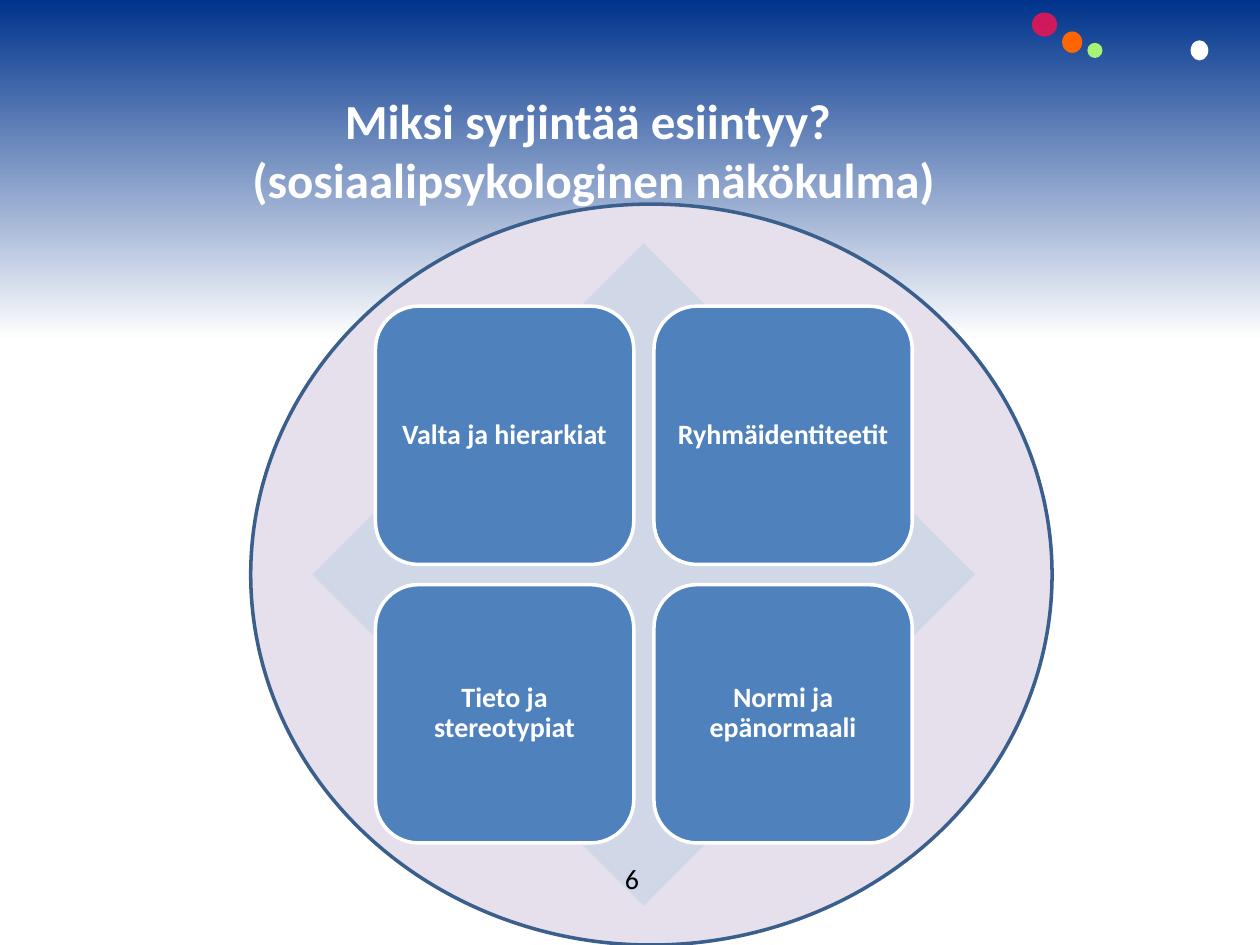
from lxml.etree import SubElement
from pptx import Presentation
from pptx.dml.color import RGBColor
from pptx.enum.shapes import MSO_SHAPE
from pptx.enum.text import MSO_ANCHOR, MSO_AUTO_SIZE, PP_ALIGN
from pptx.oxml.ns import qn
from pptx.util import Inches, Pt

TITLE = ["Miksi syrjintää esiintyy? ", "(sosiaalipsykologinen näkökulma)"]
CAUSES = [
    ["Valta ja hierarkiat", "Ryhmäidentiteetit"],
    ["Tieto ja stereotypiat", "Normi ja epänormaali"],
]
NUMBER = "6"
# left, top, width, height, colour, opacity in percent
DOTS = [
    (9.45, 0.32, 0.14, 0.16, "FFFFFF", 100),
    (8.63, 0.34, 0.12, 0.12, "A7F376", 100),
    (8.43, 0.25, 0.16, 0.17, "FF6600", 100),
    (8.19, 0.1, 0.2, 0.19, "E11656", 92),
]
WHITE = "FFFFFF"
LEFT, TOP, SIDE, STEP = 2.98, 2.43, 2.05, 2.21


def rgb(color):
    return RGBColor.from_string(color)


def add_form(kind, box, fill, line=None):
    form = slide.shapes.add_shape(kind, *map(Inches, box))
    form.shadow.inherit = False
    form.fill.solid()
    form.fill.fore_color.rgb = rgb(fill)
    if line:
        form.line.color.rgb = rgb(line)
        form.line.width = Pt(2)
    else:
        form.line.fill.background()
    return form


def write(shape, lines, size, color=WHITE, bold=True, anchor=MSO_ANCHOR.MIDDLE):
    """Fill a shape with one centred paragraph, broken between lines."""
    frame = shape.text_frame
    frame.word_wrap = True
    frame.auto_size = MSO_AUTO_SIZE.NONE
    frame.vertical_anchor = anchor
    para = frame.paragraphs[0]
    para.alignment = PP_ALIGN.CENTER
    for i, line in enumerate(lines):
        if i:
            para.add_line_break()
        run = para.add_run()
        run.text = line
        font = run.font
        font.name, font.size, font.bold = "Calibri", Pt(size), bold
        font.color.rgb = rgb(color)
    return frame


deck = Presentation()
deck.slide_width, deck.slide_height = Inches(10), Inches(7.5)
slide = deck.slides.add_slide(deck.slide_layouts[5])

back = slide.background.fill
back.gradient()
back.gradient_angle = 90
for stop, (place, color) in zip(back.gradient_stops, [(0.64, WHITE), (1, "00338C")]):
    stop.position = place
    stop.color.rgb = rgb(color)

for *box, color, alpha in DOTS:
    dot = add_form(MSO_SHAPE.OVAL, box, color)
    if alpha < 100:
        tint = dot.fill._xPr.find(qn("a:solidFill"))[0]
        SubElement(tint, qn("a:alpha"), val=str(alpha * 1000))

add_form(MSO_SHAPE.OVAL, (1.99, 1.62, 6.36, 5.88), "E6E0EC", "3A5F8C")
add_form(MSO_SHAPE.DIAMOND, (2.48, 1.93, 5.26, 5.26), "D0D8E8")

for r, row in enumerate(CAUSES):
    for c, cause in enumerate(row):
        box = (LEFT + c * STEP, TOP + r * STEP, SIDE, SIDE)
        card = add_form(MSO_SHAPE.ROUNDED_RECTANGLE, box, "4F81BD", WHITE)
        frame = write(card, [cause], 16)
        frame.margin_left = frame.margin_right = Inches(0.07)
        frame.margin_top = frame.margin_bottom = Inches(0.07)
        frame.paragraphs[0].line_spacing = 0.9

title = slide.shapes.title
title.left, title.top = Inches(0.18), Inches(0.67)
title.width, title.height = Inches(9.06), Inches(0.65)
write(title, TITLE, 28, anchor=MSO_ANCHOR.TOP)
slide.shapes._spTree.append(title._element)  # in front of the circle

page = slide.shapes.add_textbox(*map(Inches, (3.85, 6.77, 2.33, 0.4)))
write(page, [NUMBER], 16, "000000", False)

deck.save("out.pptx")
